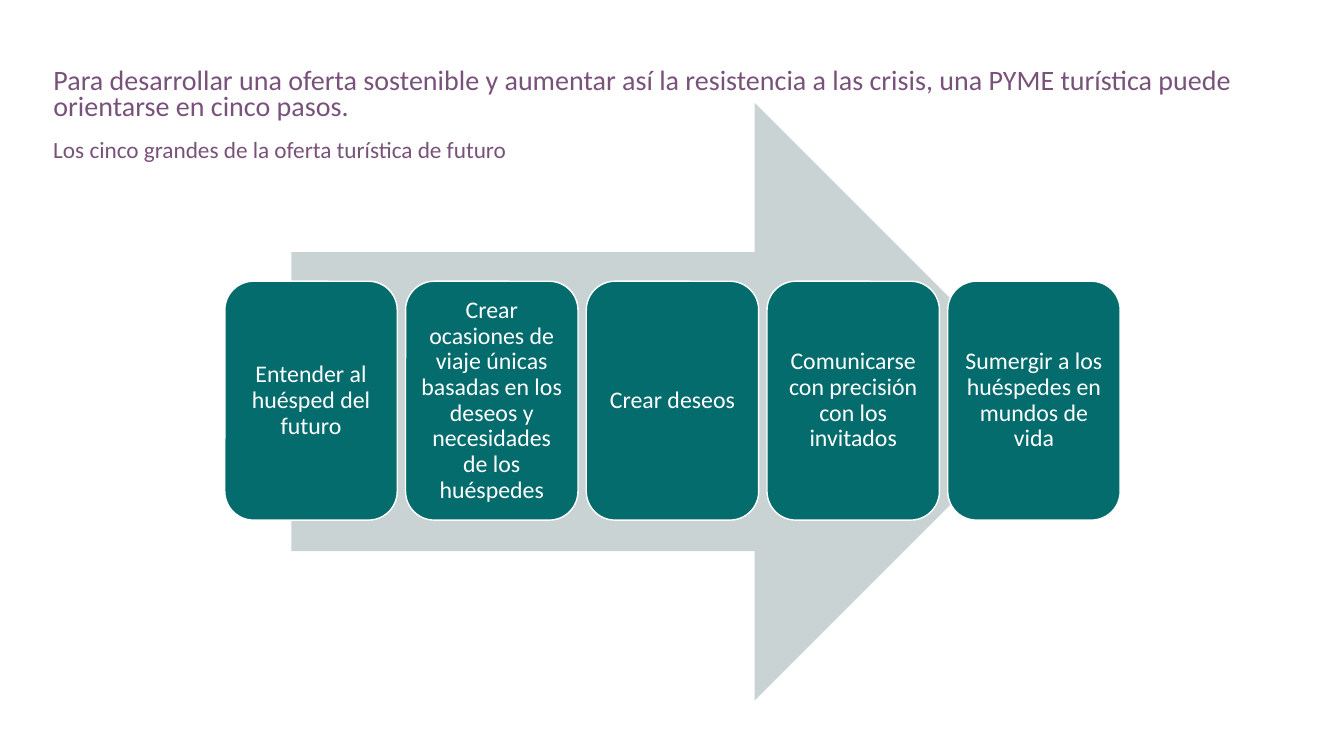
from dataclasses import dataclass

import pptx
import pptx.dml.color
import pptx.enum.shapes
import pptx.enum.text
import pptx.util

Inches = pptx.util.Inches
Shapes = pptx.enum.shapes.MSO_SHAPE
Align = pptx.enum.text.PP_ALIGN
Anchor = pptx.enum.text.MSO_ANCHOR

COLORS = {"plum": "79527B", "arrow": "CAD3D4", "teal": "056C6E", "white": "FFFFFF"}
FONT = "Calibri"
FIRST_LEFT, LAST_LEFT = 2.23, 9.40
STEP_TOP, STEP_WIDTH, STEP_HEIGHT = 2.79, 1.71, 2.37
STEPS = [
    "Entender al huésped del futuro",
    "Crear ocasiones de viaje únicas basadas en los deseos y necesidades de los huéspedes",
    "Crear deseos",
    "Comunicarse con precisión con los invitados",
    "Sumergir a los huéspedes en mundos de vida",
]


@dataclass(frozen=True)
class TextStyle:
    size: float
    color: str
    spacing: float
    align: Align
    anchor: Anchor
    inset_x: float
    inset_y: float


TITLE = TextStyle(20, "plum", 0.8, Align.LEFT, Anchor.TOP, 0.1, 0.05)
SUBTITLE = TextStyle(16.6, "plum", 0.8, Align.LEFT, Anchor.TOP, 0.1, 0.05)
STEP = TextStyle(17, "white", 0.9, Align.CENTER, Anchor.MIDDLE, 0.07, 0.07)


def rgb(name: str) -> pptx.dml.color.RGBColor:
    return pptx.dml.color.RGBColor.from_string(COLORS[name])


def write(box, text: str, style: TextStyle) -> None:
    frame = box.text_frame
    frame.word_wrap = True
    frame.auto_size = pptx.enum.text.MSO_AUTO_SIZE.NONE
    frame.vertical_anchor = style.anchor
    frame.margin_left = frame.margin_right = Inches(style.inset_x)
    frame.margin_top = frame.margin_bottom = Inches(style.inset_y)
    para = frame.paragraphs[0]
    para.alignment = style.align
    para.line_spacing = style.spacing
    para.space_before = pptx.util.Pt(0)
    span = para.add_run()
    span.text = text
    span.font.name = FONT
    span.font.size = pptx.util.Pt(style.size)
    span.font.color.rgb = rgb(style.color)


def add_filled(page, kind: Shapes, left: float, top: float, width: float, height: float, color: str):
    shape = page.shapes.add_shape(kind, Inches(left), Inches(top), Inches(width), Inches(height))
    shape.shadow.inherit = False
    shape.fill.solid()
    shape.fill.fore_color.rgb = rgb(color)
    shape.line.fill.background()
    return shape


def add_step(page, left: float, text: str) -> None:
    card = add_filled(page, Shapes.ROUNDED_RECTANGLE, left, STEP_TOP, STEP_WIDTH, STEP_HEIGHT, "teal")
    card.adjustments[0] = 1 / 6
    card.line.color.rgb = rgb("white")
    card.line.width = pptx.util.Pt(1)
    write(card, text, STEP)


def main() -> None:
    deck = pptx.Presentation()
    deck.slide_width, deck.slide_height = Inches(13.33), Inches(7.5)
    page = deck.slides.add_slide(deck.slide_layouts.get_by_name("Title Only"))

    title = page.shapes.title
    title.left, title.top = Inches(0.43), Inches(0.63)
    title.width, title.height = Inches(12.54), Inches(0.64)
    write(
        title,
        "Para desarrollar una oferta sostenible y aumentar así la resistencia a las crisis, "
        "una PYME turística puede orientarse en cinco pasos.",
        TITLE,
    )
    subtitle = page.shapes.add_textbox(Inches(0.43), Inches(1.35), Inches(12.54), Inches(0.33))
    write(subtitle, "Los cinco grandes de la oferta turística de futuro", SUBTITLE)

    add_filled(page, Shapes.RIGHT_ARROW, 2.89, 1.02, 7.56, 5.93, "arrow")
    pitch = (LAST_LEFT - FIRST_LEFT) / (len(STEPS) - 1)
    for index, text in enumerate(STEPS):
        add_step(page, FIRST_LEFT + index * pitch, text)

    deck.save("out.pptx")


if __name__ == "__main__":
    main()
